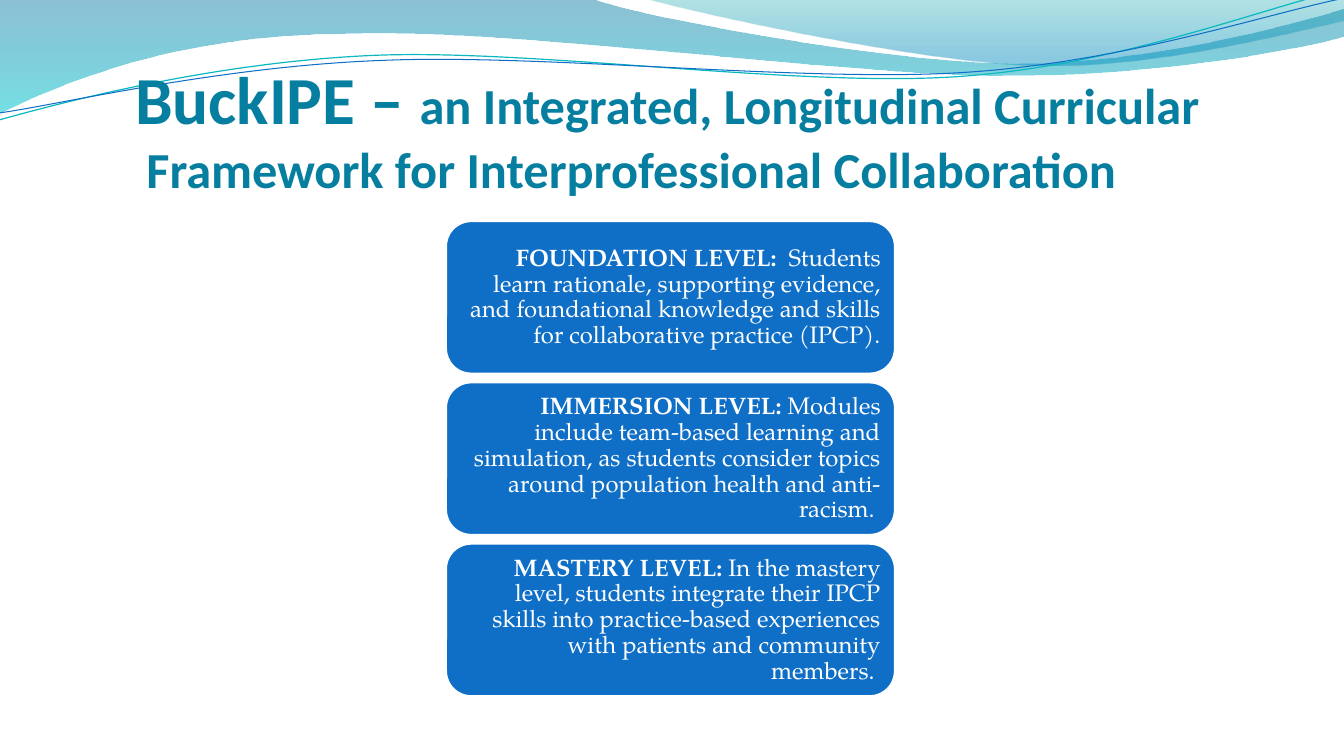
from dataclasses import dataclass

from lxml import etree
from pptx import Presentation
from pptx.dml import color
from pptx.enum import shapes, text
from pptx.oxml import ns
from pptx.util import Inches, Pt


@dataclass(frozen=True)
class Theme:
    title: str = "057E9F"
    box: str = "0F6FC6"
    white: str = "FFFFFF"
    teal: str = "0AB8BF"
    # Gradient stops: place in percent, colour, opacity in percent
    broad: tuple = ((0, "0074A1", 45), (100, "00C6CF", 55))
    crest: tuple = ((0, "00A1A9", 30), (80, "008BBF", 45))
    head: str = "Calibri"
    body: str = "TeX Gyre Pagella"
    big: int = 48
    mid: int = 36
    small: int = 17


def rgb(code):
    return color.RGBColor.from_string(code)


class Deck:
    def __init__(self, theme):
        self.theme = theme
        self.file = Presentation()
        self.file.slide_width, self.file.slide_height = Inches(13.33), Inches(7.5)
        self.slide = self.file.slides.add_slide(self.file.slide_layouts[6])

    def outline(self, parts, close):
        """Join parts: two numbers make a point, six make a curve."""
        dots = [(Inches(part[i]), Inches(part[i + 1]))
                for part in parts for i in range(0, len(part), 2)]
        pen = self.slide.shapes.build_freeform(*dots[0])
        pen.add_line_segments(dots[1:], close=close)
        shape = pen.convert_to_shape()
        shape.shadow.inherit = False
        # Turn each run of three lines into one curve
        lines = iter(list(shape._element.iter(ns.qn("a:lnTo"))))
        for part in parts[1:]:
            line = next(lines)
            if len(part) == 6:
                line.tag = ns.qn("a:cubicBezTo")
                for _ in range(2):
                    extra = next(lines)
                    line.append(extra[0])
                    extra.getparent().remove(extra)
        return shape

    def wave(self, parts, stops):
        shape = self.outline(parts, True)
        shape.line.fill.background()
        shape.fill.gradient()
        shape.fill.gradient_angle = 270
        for stop, (place, tint, alpha) in zip(shape.fill.gradient_stops, stops):
            stop.position = place / 100
            stop.color.rgb = rgb(tint)
        # Opacity of each stop
        marks = shape._element.spPr.iter(ns.qn("a:srgbClr"))
        for mark, (place, tint, alpha) in zip(marks, stops):
            etree.SubElement(mark, ns.qn("a:alpha"), val=str(alpha * 1000))

    def curve(self, parts, tint, width):
        shape = self.outline(parts, False)
        shape.fill.background()
        shape.line.color.rgb = rgb(tint)
        shape.line.width = Pt(width)

    def run(self, para, words, face, size, tint, bold):
        run = para.add_run()
        run.text = words
        run.font.name, run.font.size, run.font.bold = face, Pt(size), bold
        run.font.color.rgb = rgb(tint)

    def frame(self, shape, anchor, side, edge):
        frame = shape.text_frame
        frame.word_wrap = True
        frame.vertical_anchor = anchor
        frame.margin_left = frame.margin_right = Inches(side)
        frame.margin_top = frame.margin_bottom = Inches(edge)
        return frame.paragraphs[0]

    def title(self, lead, first, second):
        t = self.theme
        shape = self.slide.shapes.add_textbox(
            Inches(1.34), Inches(0.5), Inches(11.6), Inches(1.47))
        para = self.frame(shape, text.MSO_ANCHOR.BOTTOM, 0, 0)
        self.run(para, lead, t.head, t.big, t.title, True)
        self.run(para, first, t.head, t.mid, t.title, True)
        para.add_line_break()
        self.run(para, second, t.head, t.mid, t.title, True)

    def level(self, top, name, words):
        t = self.theme
        shape = self.slide.shapes.add_shape(
            shapes.MSO_SHAPE.ROUNDED_RECTANGLE,
            Inches(4.42), Inches(top), Inches(4.46), Inches(1.52))
        shape.shadow.inherit = False
        shape.fill.solid()
        shape.fill.fore_color.rgb = rgb(t.box)
        shape.line.color.rgb = rgb(t.white)
        shape.line.width = Pt(2)
        para = self.frame(shape, text.MSO_ANCHOR.MIDDLE, 0.07, 0.04)
        para.alignment = text.PP_ALIGN.RIGHT
        para.line_spacing = 0.9
        self.run(para, name, t.body, t.small, t.white, True)
        self.run(para, words, t.body, t.small, t.white, False)


LEVELS = (
    ("FOUNDATION LEVEL:  ",
     "Students learn rationale, supporting evidence, and foundational "
     "knowledge and skills for collaborative practice (IPCP)."),
    ("IMMERSION LEVEL: ",
     "Modules include team-based learning and simulation, as students "
     "consider topics around population health and anti-racism. "),
    ("MASTERY LEVEL: ",
     "In the mastery level, students integrate their IPCP skills into "
     "practice-based experiences with patients and community members. "),
)


def main():
    theme = Theme()
    deck = Deck(theme)

    # Waves along the top
    deck.wave((
        (0, -0.01), (5.87, -0.01),
        (6.34, 0.17, 8.85, 0.63, 10.11, 0.63),
        (11.38, 0.63, 12.78, 0.26, 13.33, 0.09), (13.35, 0.36),
        (13.11, 0.44, 11.6, 0.76, 9.94, 0.75),
        (8.29, 0.75, 5.09, 0.28, 3.43, 0.34),
        (1.72, 0.35, 0.61, 0.83, -0.01, 1.13)), theme.broad)
    deck.wave((
        (6.39, -0.01),
        (6.79, 0.11, 9.09, 0.62, 10.25, 0.65),
        (11.41, 0.69, 12.82, 0.32, 13.33, 0.21), (13.33, 0)), theme.crest)

    # Thin lines across the waves
    deck.curve((
        (-0.01, 1.19),
        (0.64, 1.01, 2.11, 0.62, 3.69, 0.55),
        (5.27, 0.48, 7.9, 0.87, 9.5, 0.76),
        (11.1, 0.65, 12.52, 0.08, 13.31, -0.1)), theme.teal, 0.85)
    deck.curve((
        (0, 1.12),
        (0.63, 1.03, 2.18, 0.66, 3.78, 0.6),
        (5.37, 0.53, 7.96, 0.82, 9.55, 0.72),
        (11.15, 0.62, 12.55, 0.14, 13.34, -0.02)), theme.box, 0.75)

    # Title
    deck.title("BuckIPE – ", "an Integrated, Longitudinal Curricular",
               " Framework for Interprofessional Collaboration")

    # Stack of levels
    for i, (name, words) in enumerate(LEVELS):
        deck.level(2.19 + 1.6 * i, name, words)

    deck.file.save("out.pptx")


if __name__ == "__main__":
    main()
